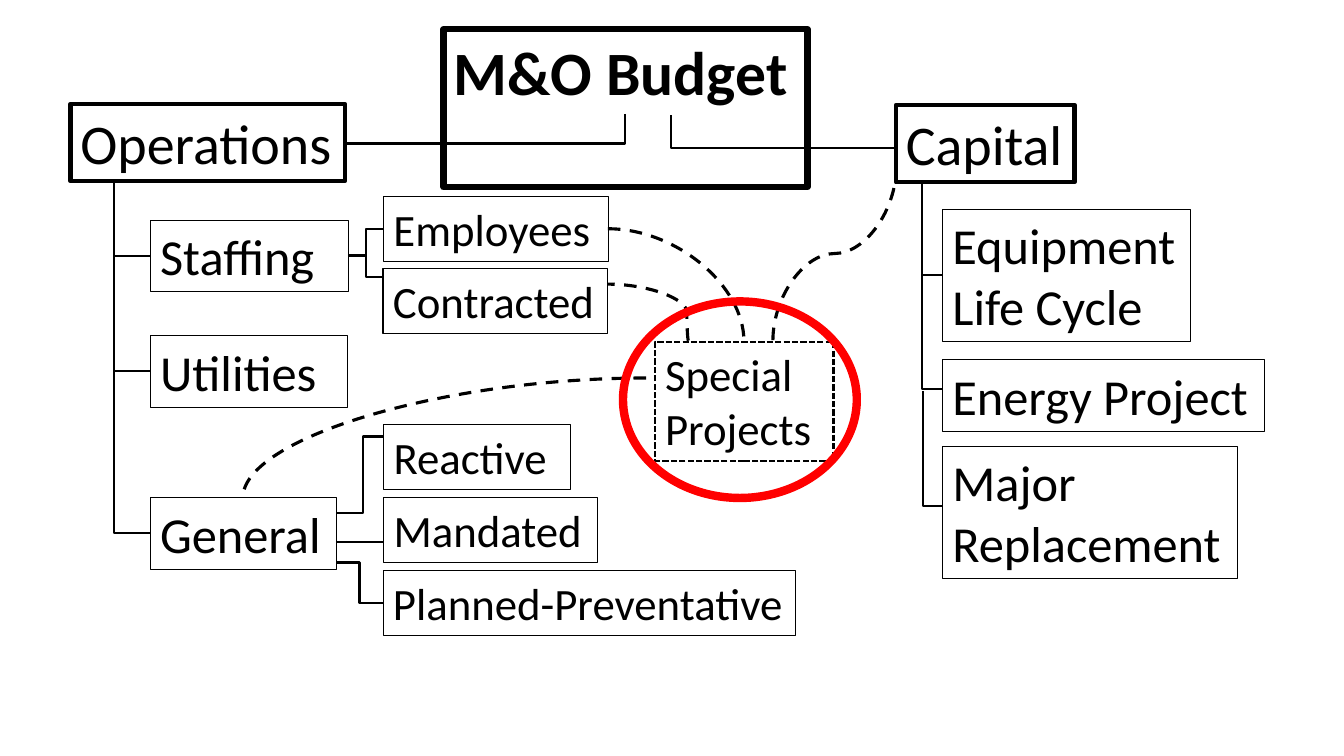
import pptx
import pptx.util
import pptx.dml.color
import pptx.enum.dml
import pptx.enum.shapes
import pptx.enum.text
import pptx.oxml
import pptx.oxml.ns

Pt = pptx.util.Pt
Dash = pptx.enum.dml.MSO_LINE
Link = pptx.enum.shapes.MSO_CONNECTOR
qn = pptx.oxml.ns.qn
space = pptx.oxml.ns.nsdecls("a")


def paint(line, width, shade="000000"):
    line.width = Pt(width)
    line.fill.solid()
    line.fill.fore_color.rgb = pptx.dml.color.RGBColor.from_string(shade)


def join(kind, start, end, width, bend=None):
    """Draw a connector; bend is the share of its width before the turn."""
    link = slide.shapes.add_connector(kind, *[Pt(n) for n in start + end])
    paint(link.line, width)
    props = link._element.spPr
    props.append(pptx.oxml.parse_xml(f"<a:effectLst {space}/>"))
    if bend is not None:
        guide = pptx.oxml.parse_xml(
            f'<a:gd {space} name="adj1" fmla="val {round(bend * 100000)}"/>')
        props.find(qn("a:prstGeom")).get_or_add_avLst().append(guide)
    return link


deck = pptx.Presentation()
deck.slide_width, deck.slide_height = Pt(960), Pt(540)
slide = deck.slides.add_slide(deck.slide_layouts[5])

# Boxes: text, left, top, width, height, text size, line width
boxes = [
    ("M&O Budget", 316.8, 20.9, 260, 60.5, 44, 4.5),
    ("Operations", 50.4, 74.2, 195.8, 55.4, 40, 3),
    ("Capital", 640, 74.9, 127.5, 55.4, 40, 3),
    ("Staffing", 107.3, 157.5, 141.8, 51, 36, 0.75),
    ("Utilities", 107.3, 239.8, 141.1, 51, 36, 0.75),
    ("General", 107.3, 355.7, 133.2, 51, 36, 0.75),
    ("Employees", 274, 140.4, 160.6, 46.3, 32, 0.75),
    ("Contracted", 273.6, 192, 160.6, 46.3, 32, 0.75),
    ("Reactive", 274, 303.1, 133.2, 46.3, 32, 0.75),
    ("Mandated", 274, 355.7, 152.6, 46.3, 32, 0.75),
    ("Planned-Preventative", 273.6, 407.5, 294.5, 46.3, 32, 0.75),
    ("Equipment Life Cycle", 673.2, 149.4, 177.1, 94.3, 36, 0.75),
    ("Energy Project", 673.2, 257, 230.4, 51, 36, 0.75),
    ("Major Replacement", 673.2, 319, 211, 94.3, 36, 0.75),
    ("Special Projects", 468, 244, 127.4, 85, 32, 1.5),
]
for text, left, top, width, height, size, stroke in boxes:
    spot = [Pt(n) for n in (left, top, width, height)]
    if text == "M&O Budget":
        box = slide.shapes.title
        box.left, box.top, box.width, box.height = spot
    else:
        box = slide.shapes.add_textbox(*spot)
    paint(box.line, stroke)
    if text == "Special Projects":
        box.line.dash_style = Dash.SQUARE_DOT
    frame = box.text_frame
    frame.text = text
    frame.word_wrap = True
    frame.auto_size = pptx.enum.text.MSO_AUTO_SIZE.SHAPE_TO_FIT_TEXT
    frame.vertical_anchor = pptx.enum.text.MSO_ANCHOR.TOP
    para = frame.paragraphs[0]
    para.alignment = pptx.enum.text.PP_ALIGN.LEFT
    para.font.name = "Calibri"
    para.font.size = Pt(size)
    para.font.bold = text == "M&O Budget"
    para.font.color.rgb = pptx.dml.color.RGBColor.from_string("000000")

# Solid branches: start, end, bend
elbows = [
    ((446.4, 81.4), (246.2, 102.5), 0),
    ((479.5, 82.4), (640, 106), 0),
    ((81.4, 130), (107.3, 183), 0),
    ((81.4, 171.4), (107.3, 265), 0),
    ((81.4, 265), (107.3, 381), 0),
    ((248.4, 183), (274, 163.4), 0.5),
    ((248.4, 182.2), (274, 198), 0.5),
    ((240, 366.5), (274, 311.8), 0.56),
    ((240, 401.8), (273.6, 430.6), 0.5),
    ((658.8, 131.8), (673.2, 196.6), 0),
    ((658.8, 195.8), (673.9, 278), 0),
    ((659.5, 279.4), (673.9, 361.4), 0),
]
for start, end, bend in elbows:
    join(Link.ELBOW, start, end, 1.5, bend)
join(Link.STRAIGHT, (240, 387.4), (274, 387.4), 1.5)

# Dashed links to the special projects: start, end, bend, preset, turn
curves = [
    ((461.5, 270), (173.5, 355.7), None, "curvedConnector2", 0),
    ((434.2, 163.4), (531.4, 244), None, "curvedConnector2", 0),
    ((491.8, 243.4), (434.2, 203), 0.02, "curvedConnector3", 0),
    ((533.9, 137), (658.5, 225.2), 0.5, "curvedConnector3", 90),
]
for start, end, bend, preset, turn in curves:
    curve = join(Link.CURVE, start, end, 2.25, bend)
    curve.line.dash_style = Dash.DASH
    props = curve._element.spPr
    props.find(qn("a:prstGeom")).set("prst", preset)
    if turn:
        props.find(qn("a:xfrm")).set("rot", str(turn * 60000))

ring = slide.shapes.add_shape(pptx.enum.shapes.MSO_SHAPE.OVAL,
                              Pt(445), Pt(215.3), Pt(167), Pt(140.4))
ring.shadow.inherit = False
ring.fill.background()
paint(ring.line, 6, "FF0000")

deck.save("out.pptx")
